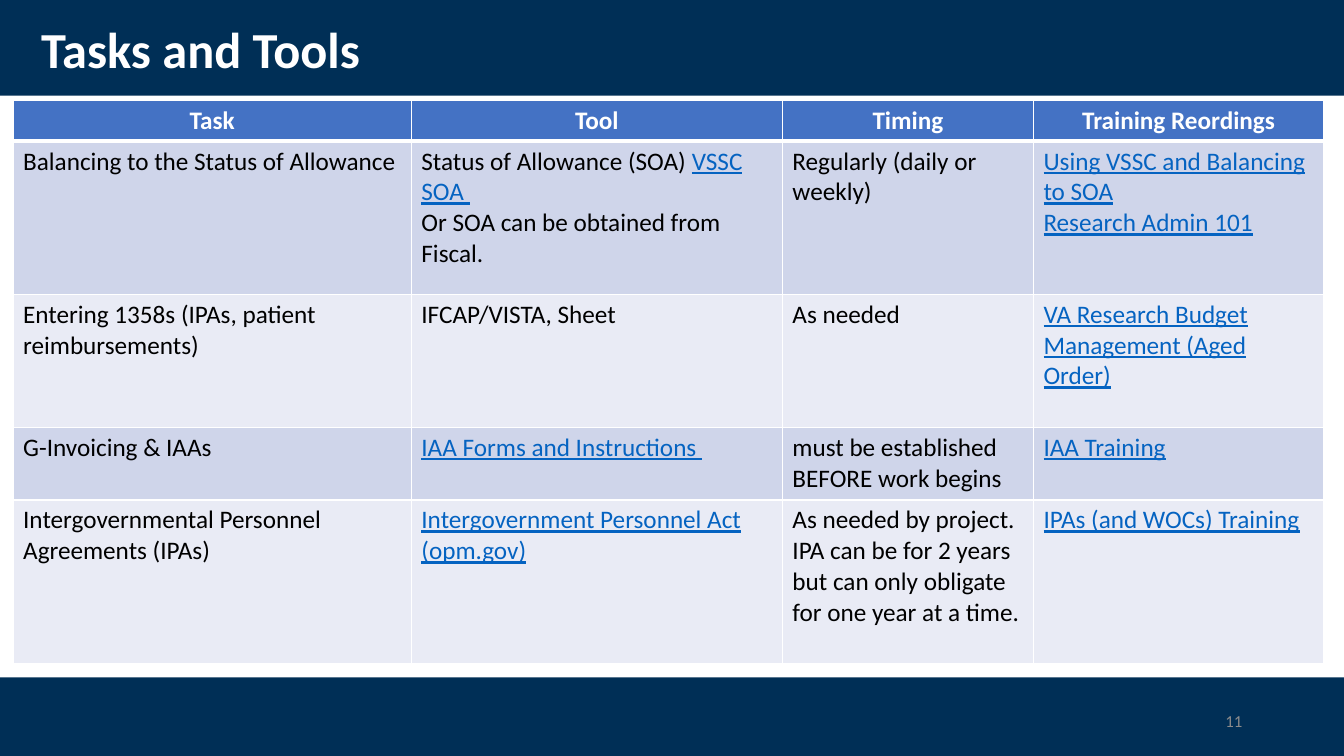
from pptx import Presentation
from pptx.dml.color import RGBColor as RGB
from pptx.enum.shapes import MSO_SHAPE as SHAPE
from pptx.enum.text import MSO_ANCHOR as ANCHOR, PP_ALIGN as ALIGN
from pptx.oxml import parse_xml
from pptx.oxml.ns import nsdecls
from pptx.util import Pt

NAVY = RGB(0x00, 0x2F, 0x56)
WHITE = RGB(0xFF, 0xFF, 0xFF)
BLACK = RGB(0x00, 0x00, 0x00)
GRAY = RGB(0x8C, 0x8C, 0x8C)
BLUE = RGB(0x44, 0x72, 0xC4)
LINK = RGB(0x05, 0x63, 0xC1)
BANDS = RGB(0xE9, 0xEB, 0xF5), RGB(0xCF, 0xD5, 0xEA)

COLS = [395, 368, 249, 288]
ROWS = [40, 152, 132, 72, 162]
HEAD = ["Task", "Tool", "Timing", "Training Reordings"]
# Text between bars is styled as a link.
TASKS = [
    ["Balancing to the Status of Allowance",
     "Status of Allowance (SOA) |VSSC SOA |\nOr SOA can be obtained from Fiscal.",
     "Regularly (daily or weekly)",
     "|Using VSSC and Balancing to SOA|\n|Research Admin 101|"],
    ["Entering 1358s (IPAs, patient reimbursements)",
     "IFCAP/VISTA, Sheet",
     "As needed",
     "|VA Research Budget Management (Aged Order)|"],
    ["G-Invoicing & IAAs",
     "|IAA Forms and Instructions |",
     "must be established BEFORE work begins",
     "|IAA Training|"],
    ["Intergovernmental Personnel Agreements (IPAs)",
     "|Intergovernment Personnel Act (opm.gov)|",
     "As needed by project. IPA can be for 2 years but can only obligate "
     "for one year at a time. ",
     "|IPAs (and WOCs) Training|"],
]


def px(n):
    """Turn px, 100 to the inch, into EMU."""
    return n * 9144


class Deck:
    face = "Calibri"

    def __init__(self, wide, high):
        self.prs = Presentation()
        self.prs.slide_width, self.prs.slide_height = px(wide), px(high)
        self.slide = self.prs.slides.add_slide(self.prs.slide_layouts[6])

    def style(self, run, size, color, bold=False, under=False):
        font = run.font
        font.name, font.size, font.bold = self.face, Pt(size), bold
        font.color.rgb = color
        if under:
            font.underline = True

    def band(self, *box):
        shape = self.slide.shapes.add_shape(SHAPE.RECTANGLE, *map(px, box))
        shape.shadow.inherit = False
        shape.fill.solid()
        shape.fill.fore_color.rgb = NAVY
        shape.line.fill.background()

    def text(self, box, words, size, color, bold=False, align=ALIGN.LEFT, lead=1.0):
        frame = self.slide.shapes.add_textbox(*map(px, box)).text_frame
        frame.word_wrap = True
        frame.vertical_anchor = ANCHOR.MIDDLE
        frame.text = words
        para = frame.paragraphs[0]
        para.alignment, para.line_spacing = align, lead
        self.style(para.runs[0], size, color, bold)

    def edge(self, cell, **sides):
        """Draw white cell borders, with widths in points by side L, R, T, B."""
        for side, width in sides.items():
            cell._tc.get_or_add_tcPr().append(parse_xml(
                f'<a:ln{side} {nsdecls("a")} w="{Pt(width)}"><a:solidFill>'
                f'<a:srgbClr val="{WHITE}"/></a:solidFill></a:ln{side}>'))

    def fill(self, cell, words, row):
        top = row == 0
        for i, line in enumerate(words.split("\n")):
            frame = cell.text_frame
            para = frame.add_paragraph() if i else frame.paragraphs[0]
            para.alignment = ALIGN.CENTER if top else ALIGN.LEFT
            for j, part in enumerate(line.split("|")):
                if part:
                    run = para.add_run()
                    run.text = part
                    link = j % 2 == 1
                    color = WHITE if top else LINK if link else BLACK
                    self.style(run, 18, color, top, link)
        self.edge(cell, L=1, R=1, T=3 if row == 1 else 1, B=3 if top else 1)
        cell.fill.solid()
        cell.fill.fore_color.rgb = BLUE if top else BANDS[row % 2]

    def table(self, left, top, cols, rows, data):
        box = left, top, sum(cols), sum(rows)
        grid = self.slide.shapes.add_table(
            len(rows), len(cols), *map(px, box)).table
        for col, width in zip(grid.columns, cols):
            col.width = px(width)
        for r, (row, height) in enumerate(zip(grid.rows, rows)):
            row.height = px(height)
            for cell, words in zip(row.cells, data[r]):
                self.fill(cell, words, r)


def main():
    deck = Deck(1333, 750)
    deck.band(0, 0, 1333, 95)
    deck.band(0, 672, 1333, 80)
    deck.text((31, 18, 1150, 68), "Tasks and Tools", 36, WHITE, bold=True, lead=0.9)
    deck.text((942, 695, 300, 40), "11", 12, GRAY, align=ALIGN.RIGHT)
    deck.table(13, 100, COLS, ROWS, [HEAD] + TASKS)
    deck.prs.save("out.pptx")


if __name__ == "__main__":
    main()
